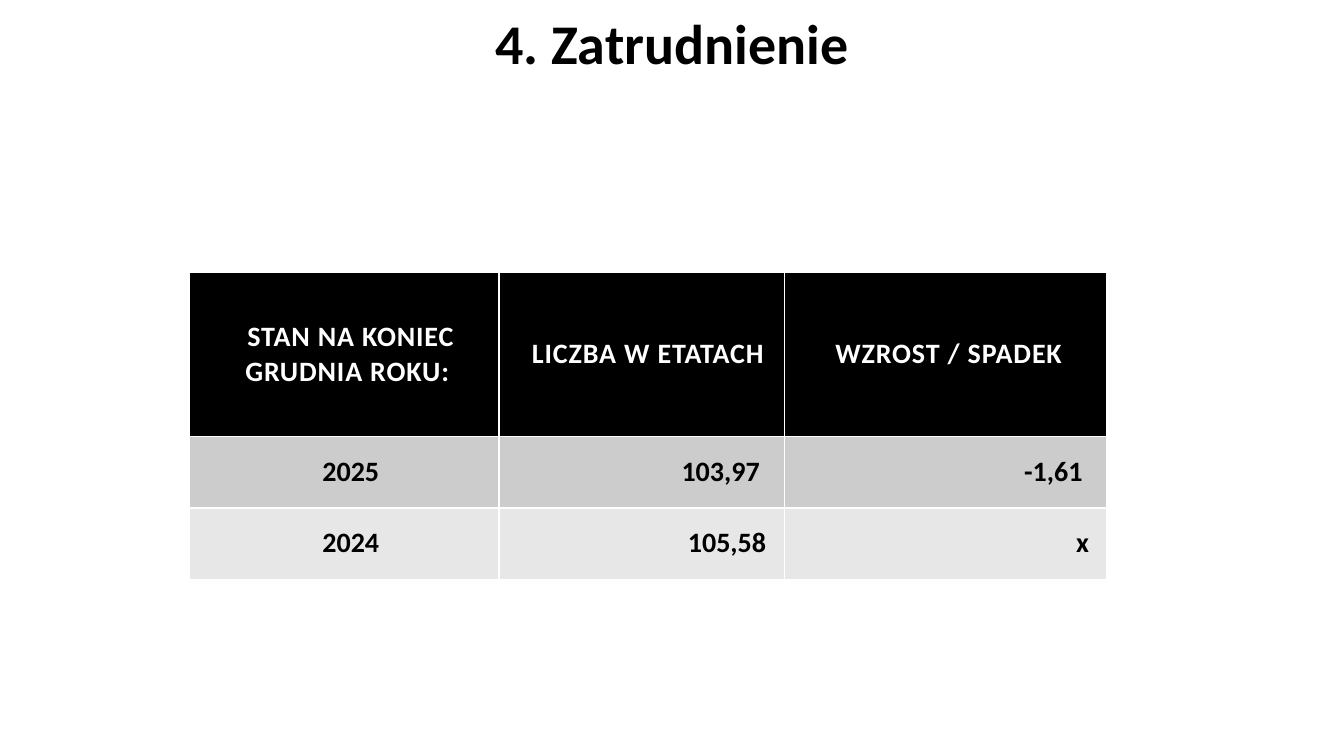
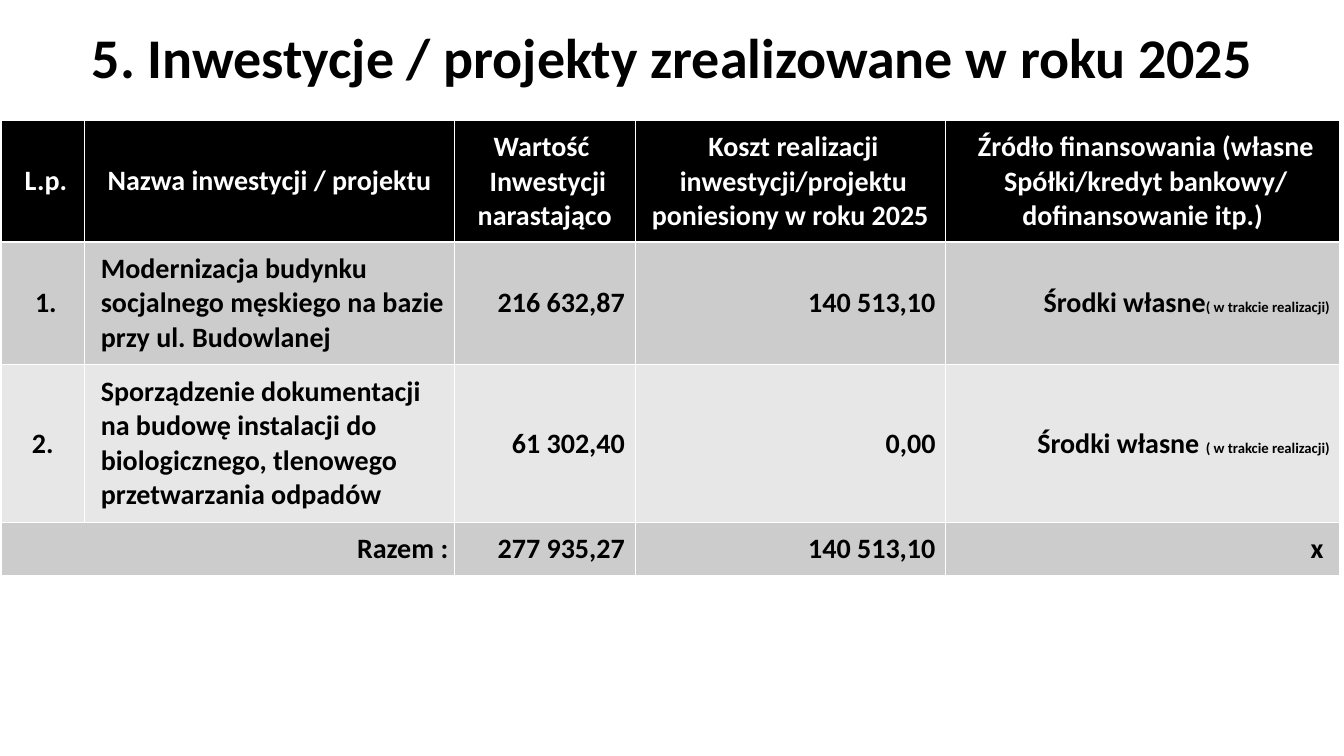
from dataclasses import dataclass

from lxml.etree import SubElement
from pptx import Presentation
from pptx.dml.color import RGBColor
from pptx.enum.text import MSO_ANCHOR as Anchor, PP_ALIGN as Align
from pptx.oxml.ns import qn
from pptx.util import Inches, Pt


@dataclass(frozen=True)
class Theme:
    font: str = "Calibri"
    ink: str = "000000"
    paper: str = "FFFFFF"
    bands: tuple = ("CCCCCC", "E7E7E7")
    title_size: float = 40
    cell_size: float = 20
    note_size: float = 10.5
    border: float = 1


THEME = Theme()
SLIDE_WIDTH, SLIDE_HEIGHT = 13.33, 7.5
TITLE_INSETS = (0.07, 0.04, 0.07, 0.04)
NO_INSETS = (0, 0, 0, 0)
NOTE = "( w trakcie realizacji)"

SLIDES = [
    {
        "title": "4. Zatrudnienie",
        "title_height": 0.93,
        "origin": (1.88, 2.7),
        "columns": (3.07, 2.83, 3.2),
        "heights": (1.63, 0.71, 0.71),
        "aligns": (Align.CENTER, Align.RIGHT, Align.RIGHT),
        "insets": (0.31, 0.18, 0.18, 0.18),
        "body_anchor": Anchor.TOP,
        "header_spacing": 60,
        "rows": [
            ("STAN NA KONIEC GRUDNIA ROKU: ", "LICZBA W ETATACH ", "WZROST / SPADEK "),
            ("2025", "103,97 ", "-1,61 "),
            ("2024", "105,58", "x"),
        ],
    },
    {
        "title": "5. Inwestycje / projekty zrealizowane w roku 2025",
        "title_height": 1.2,
        "origin": (0.01, 1.19),
        "columns": (0.83, 3.67, 1.79, 3.08, 3.91),
        "heights": (1.21, 1.22, 1.56, 0.53),
        "aligns": (Align.CENTER, Align.LEFT, Align.RIGHT, Align.RIGHT, Align.RIGHT),
        "insets": (0.16, 0.1, 0.1, 0.1),
        "body_anchor": Anchor.MIDDLE,
        "header_spacing": 0,
        "total_span": 2,
        "rows": [
            (
                "L.p.",
                "Nazwa inwestycji / projektu ",
                "Wartość  \nInwestycji narastająco ",
                "Koszt realizacji inwestycji/projektu poniesiony w roku 2025 ",
                "Źródło finansowania (własne Spółki/kredyt bankowy/ dofinansowanie itp.) ",
            ),
            (
                "1.",
                "Modernizacja budynku socjalnego męskiego na bazie przy ul. Budowlanej",
                "216 632,87",
                "140 513,10",
                ("Środki własne", NOTE),
            ),
            (
                "2. ",
                "Sporządzenie dokumentacji na budowę instalacji do biologicznego, "
                "tlenowego przetwarzania odpadów",
                "61 302,40",
                "0,00",
                ("Środki własne ", NOTE),
            ),
            ("Razem : ", None, "277 935,27", "140 513,10", "x "),
        ],
    },
]


def style_paragraph(paragraph, size, color, align):
    paragraph.alignment = align
    font = paragraph.font
    font.name = THEME.font
    font.size = Pt(size)
    font.bold = True
    font.color.rgb = RGBColor.from_string(color)


def set_insets(target, insets):
    for side, inset in zip(("left", "top", "right", "bottom"), insets):
        setattr(target, f"margin_{side}", Inches(inset))


def add_title(slide, text, height):
    frame = slide.shapes.add_textbox(0, 0, Inches(SLIDE_WIDTH), Inches(height)).text_frame
    frame.word_wrap = True
    frame.vertical_anchor = Anchor.MIDDLE
    set_insets(frame, TITLE_INSETS)
    heading = frame.paragraphs[0]
    heading.text = text
    heading.line_spacing = 0.9
    style_paragraph(heading, THEME.title_size, THEME.ink, Align.CENTER)


def paint_cell(cell, color):
    properties = cell._tc.get_or_add_tcPr()
    for side in "LRTB":
        line = SubElement(properties, qn(f"a:ln{side}"), w=str(Pt(THEME.border)))
        SubElement(SubElement(line, qn("a:solidFill")), qn("a:srgbClr"), val=THEME.paper)
    cell.fill.solid()
    cell.fill.fore_color.rgb = RGBColor.from_string(color)


def write_cell(cell, content, color, align, spacing):
    text, note = content if isinstance(content, tuple) else (content, None)
    cell.text = text
    for paragraph in cell.text_frame.paragraphs:
        style_paragraph(paragraph, THEME.cell_size, color, align)
        if spacing:
            for run in paragraph.runs:
                run._r.get_or_add_rPr().set("spc", str(spacing))
    if note:
        remark = cell.text_frame.paragraphs[-1].add_run()
        remark.text = note
        remark.font.size = Pt(THEME.note_size)


def add_grid(slide, data):
    rows, columns, heights = data["rows"], data["columns"], data["heights"]
    left, top = data["origin"]
    table = slide.shapes.add_table(
        len(rows), len(columns), Inches(left), Inches(top),
        Inches(sum(columns)), Inches(sum(heights)),
    ).table
    table.first_row = table.horz_banding = False
    for column, width in zip(table.columns, columns):
        column.width = Inches(width)
    for row, height in zip(table.rows, heights):
        row.height = Inches(height)

    span = data.get("total_span", 1)
    for r, row in enumerate(rows):
        header = r == 0
        fill = THEME.ink if header else THEME.bands[(r - 1) % len(THEME.bands)]
        for c, content in enumerate(row):
            cell = table.cell(r, c)
            paint_cell(cell, fill)
            if content is None:
                continue
            total_label = span > 1 and r == len(rows) - 1 and c == 0
            align = Align.CENTER if header else Align.RIGHT if total_label else data["aligns"][c]
            set_insets(cell, NO_INSETS if total_label else data["insets"])
            cell.vertical_anchor = Anchor.MIDDLE if header else data["body_anchor"]
            write_cell(
                cell, content, THEME.paper if header else THEME.ink, align,
                data["header_spacing"] if header else 0,
            )
    if span > 1:
        table.cell(len(rows) - 1, 0).merge(table.cell(len(rows) - 1, span - 1))


def main():
    deck = Presentation()
    deck.slide_width, deck.slide_height = Inches(SLIDE_WIDTH), Inches(SLIDE_HEIGHT)
    for data in SLIDES:
        slide = deck.slides.add_slide(deck.slide_layouts[6])
        add_title(slide, data["title"], data["title_height"])
        add_grid(slide, data)
    deck.save("out.pptx")


if __name__ == "__main__":
    main()
